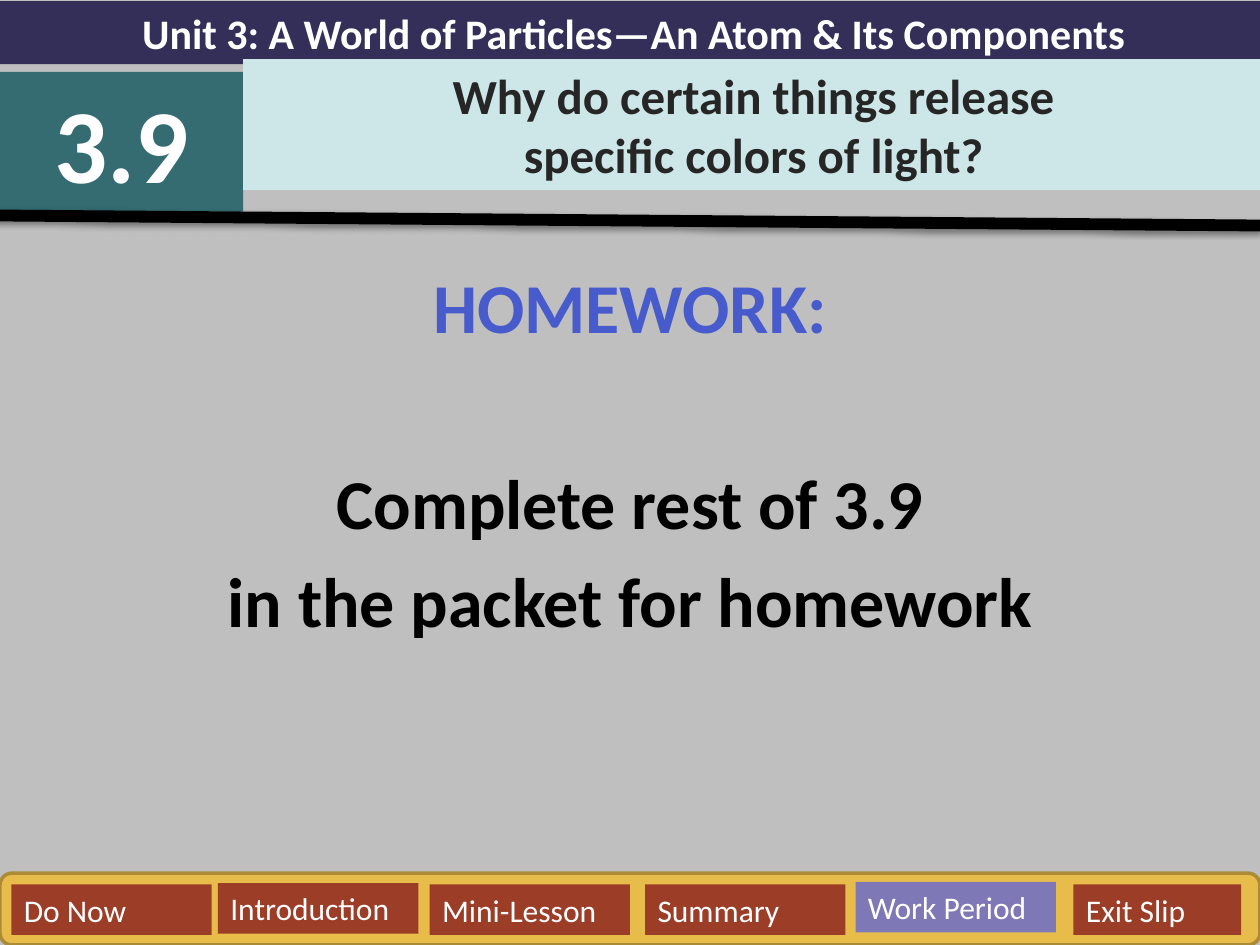
from dataclasses import dataclass

from lxml.etree import SubElement
from pptx import Presentation
from pptx.dml.color import RGBColor
from pptx.enum.shapes import MSO_CONNECTOR as Connector, MSO_SHAPE as Shape
from pptx.enum.text import MSO_ANCHOR as Anchor, MSO_AUTO_SIZE as AutoSize, PP_ALIGN as Align
from pptx.oxml.ns import qn
from pptx.util import Inches, Pt


@dataclass(frozen=True)
class Theme:
    font: str = "Calibri"
    background: str = "BFBFBF"
    unit: str = "342F59"
    lesson: str = "346C71"
    question: str = "CDE6E8"
    question_text: str = "262626"
    heading: str = "475BCD"
    black: str = "000000"
    white: str = "FFFFFF"
    bar: str = "E8BC4A"
    bar_edge: str = "AC8B37"
    tab: str = "9C3D28"
    active_tab: str = "7E78B7"
    unit_size: int = 24
    lesson_size: int = 60
    question_size: int = 28
    body_size: int = 40
    tab_size: int = 18


class LessonSlide:
    COLUMNS, ROWS = 100, 75

    def __init__(self, deck, theme):
        self.theme = theme
        self.cell_width = deck.slide_width / self.COLUMNS
        self.cell_height = deck.slide_height / self.ROWS
        self.page = deck.slides.add_slide(deck.slide_layouts[0])
        self.paint(self.page.background.fill, theme.background)

    def paint(self, fill, color):
        fill.solid()
        fill.fore_color.rgb = RGBColor.from_string(color)

    def place(self, column, row, width, height):
        return (round(column * self.cell_width), round(row * self.cell_height),
                round(width * self.cell_width), round(height * self.cell_height))

    def move(self, shape, area):
        shape.left, shape.top, shape.width, shape.height = self.place(*area)

    def label(self, shape, lines, size, color, bold=True, align=Align.CENTER, anchor=Anchor.MIDDLE):
        frame = shape.text_frame
        frame.text = "\n".join(lines)
        frame.word_wrap = True
        frame.auto_size = AutoSize.NONE
        frame.vertical_anchor = anchor
        for para in frame.paragraphs:
            para.alignment = align
            para.font.name = self.theme.font
            para.font.size = Pt(size)
            para.font.bold = bold
            para.font.color.rgb = RGBColor.from_string(color)
        return frame.paragraphs

    def title(self, area, text):
        title = self.page.shapes.title
        self.move(title, area)
        self.paint(title.fill, self.theme.unit)
        self.label(title, [text], self.theme.unit_size, self.theme.white)

    def body(self, area, heading, lines):
        body = self.page.placeholders[1]
        self.move(body, area)
        paras = self.label(body, [heading, *lines], self.theme.body_size,
                           self.theme.black, anchor=Anchor.TOP)
        paras[0].font.color.rgb = RGBColor.from_string(self.theme.heading)
        for para in paras:
            para.space_before = Pt(8)
        paras[1].space_before = Pt(64)

    def box(self, area, fill, kind=Shape.RECTANGLE, edge=None):
        box = self.page.shapes.add_shape(kind, *self.place(*area))
        box.shadow.inherit = False
        self.paint(box.fill, fill)
        if edge:
            self.paint(box.line.fill, edge)
            box.line.width = Pt(2)
        else:
            box.line.fill.background()
        return box

    def tab(self, area, text, fill):
        self.label(self.box(area, fill), [text], self.theme.tab_size,
                   self.theme.white, bold=False, align=Align.LEFT)

    def rule(self, start, end):
        rule = self.page.shapes.add_connector(
            Connector.STRAIGHT, *self.place(*start, *end))
        rule.line.width = Pt(6.75)
        self.paint(rule.line.fill, self.theme.black)
        effects = SubElement(rule.element.spPr, qn("a:effectLst"))
        shadow = SubElement(effects, qn("a:outerShdw"), blurRad=str(Pt(3.1)),
                            dist=str(Pt(1.6)), dir="5400000", rotWithShape="0")
        color = SubElement(shadow, qn("a:srgbClr"), val=self.theme.black)
        SubElement(color, qn("a:alpha"), val="38000")


def main():
    deck = Presentation()
    deck.slide_width, deck.slide_height = Inches(10), Inches(7.5)
    theme = Theme()
    slide = LessonSlide(deck, theme)

    slide.title((0, 0.1, 100.6, 5), "Unit 3: A World of Particles—An Atom & Its Components")
    slide.body((0, 20.4, 100, 54.6), "HOMEWORK:",
               ["Complete rest of 3.9", "in the packet for homework"])
    lesson = slide.box((0, 5.7, 19.3, 11.1), theme.lesson)
    slide.label(lesson, ["3.9"], theme.lesson_size, theme.white)
    question = slide.box((19.3, 4.7, 81, 10.4), theme.question)
    slide.label(question, ["Why do certain things release", "specific colors of light?"],
                theme.question_size, theme.question_text)
    slide.rule((-0.5, 17.1), (100, 17.9))

    slide.box((0, 69.3, 100, 5.7), theme.bar, Shape.ROUNDED_RECTANGLE, theme.bar_edge)
    tabs = [
        ("Do Now", 0.9, 70.2, 15.9, theme.tab),
        ("Introduction", 17.3, 70.1, 15.9, theme.tab),
        ("Mini-Lesson", 34.1, 70.2, 15.9, theme.tab),
        ("Summary", 51.2, 70.2, 15.9, theme.tab),
        ("Work Period", 67.9, 70, 15.9, theme.active_tab),
        ("Exit Slip", 85.2, 70.2, 13.3, theme.tab),
    ]
    for text, column, row, width, fill in tabs:
        slide.tab((column, row, width, 4), text, fill)

    deck.save("out.pptx")


if __name__ == "__main__":
    main()
